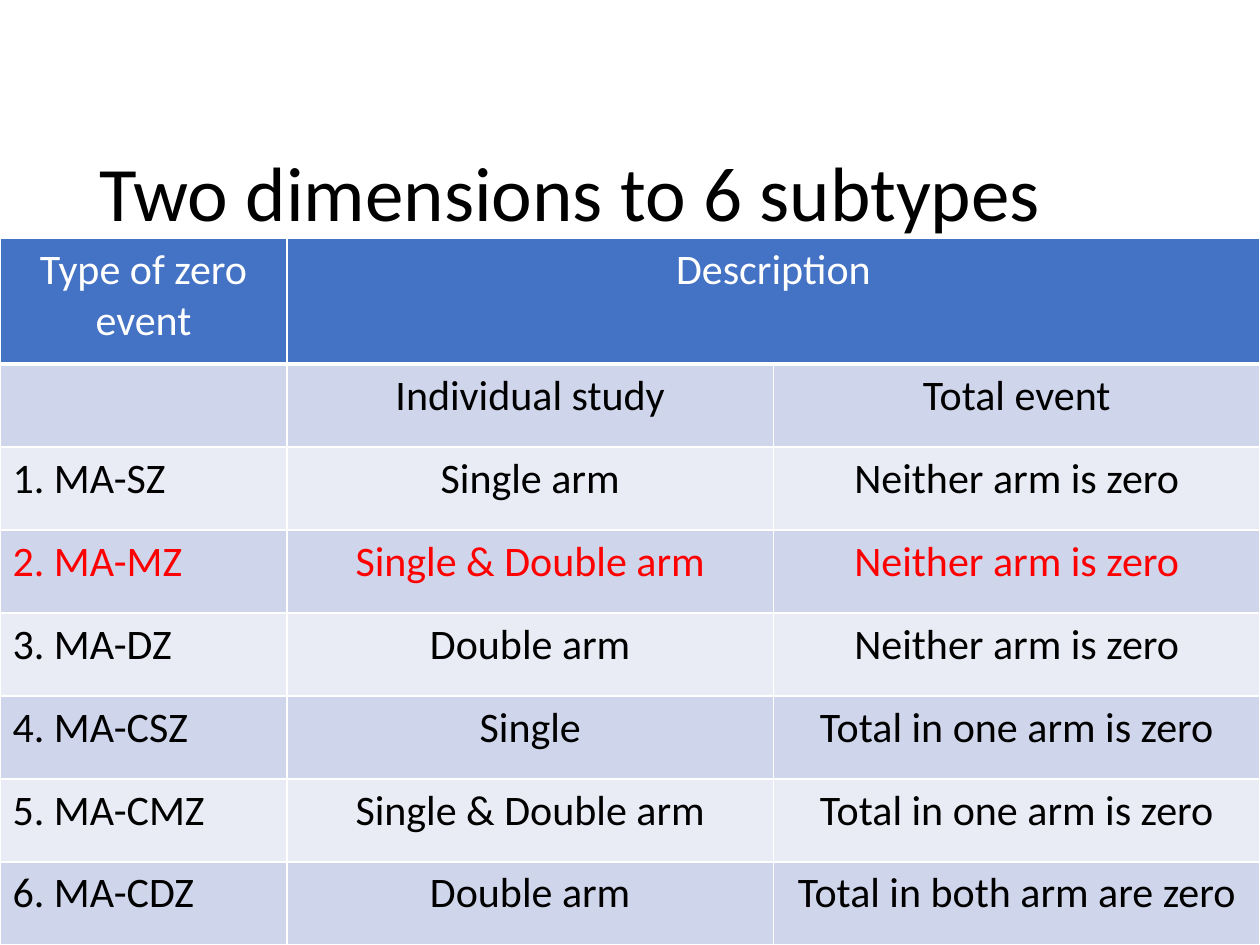
import dataclasses

import lxml.etree
import pptx
import pptx.dml.color
import pptx.enum.text
import pptx.oxml.ns
import pptx.table
import pptx.util

Pt = pptx.util.Pt
RGBColor = pptx.dml.color.RGBColor
ALIGN = pptx.enum.text.PP_ALIGN

BLACK = RGBColor(0x00, 0x00, 0x00)
WHITE = RGBColor(0xFF, 0xFF, 0xFF)
RED = RGBColor(0xFF, 0x00, 0x00)
HEADER_BLUE = RGBColor(0x44, 0x72, 0xC4)
BAND_DARK = RGBColor(0xCF, 0xD5, 0xEA)
BAND_LIGHT = RGBColor(0xE9, 0xEB, 0xF5)

FONT = "Calibri"
COLUMN_WIDTHS = (164, 278, 278)
HEADER_HEIGHT = 72
ROW_HEIGHT = 47.4
TABLE_TOP = 136.1
THIN, THICK = 1, 3


@dataclasses.dataclass(frozen=True)
class Subtype:
    label: str
    study: str
    total: str
    color: RGBColor = BLACK


ROWS = (
    Subtype("Type of zero event", "Description", "", WHITE),
    Subtype("", "Individual study", "Total event"),
    Subtype("1. MA-SZ", "Single arm", "Neither arm is zero"),
    Subtype("2. MA-MZ", "Single & Double arm", "Neither arm is zero", RED),
    Subtype("3. MA-DZ", "Double arm", "Neither arm is zero"),
    Subtype("4. MA-CSZ", "Single", "Total in one arm is zero"),
    Subtype("5. MA-CMZ", "Single & Double arm", "Total in one arm is zero"),
    Subtype("6. MA-CDZ", "Double arm", "Total in both arm are zero"),
)


def set_borders(cell: pptx.table._Cell, top: float, bottom: float) -> None:
    qn = pptx.oxml.ns.qn
    properties = cell._tc.get_or_add_tcPr()
    for side, width in (("L", THIN), ("R", THIN), ("T", top), ("B", bottom)):
        line = lxml.etree.SubElement(properties, qn(f"a:ln{side}"), w=str(Pt(width)))
        fill = lxml.etree.SubElement(line, qn("a:solidFill"))
        lxml.etree.SubElement(fill, qn("a:srgbClr"), val=str(WHITE))


def format_font(font, size: float, color: RGBColor) -> None:
    font.name = FONT
    font.size = Pt(size)
    font.bold = False
    font.color.rgb = color


def fill_row(table: pptx.table.Table, index: int, subtype: Subtype) -> None:
    if index == 0:
        band = HEADER_BLUE
    else:
        band = BAND_DARK if index % 2 else BAND_LIGHT
    for column, text in enumerate((subtype.label, subtype.study, subtype.total)):
        cell = table.cell(index, column)
        set_borders(cell, THICK if index == 1 else THIN, THICK if index == 0 else THIN)
        cell.fill.solid()
        cell.fill.fore_color.rgb = band
        cell.text_frame.text = text
        paragraph = cell.text_frame.paragraphs[0]
        centered = index == 0 or column > 0
        paragraph.alignment = ALIGN.CENTER if centered else ALIGN.LEFT
        format_font(paragraph.font, 24, subtype.color)
        for run in paragraph.runs:
            format_font(run.font, 24, subtype.color)


def add_title(slide, text: str) -> None:
    title = slide.shapes.title
    title.left, title.top, title.width, title.height = Pt(49.5), Pt(60), Pt(621), Pt(104.4)
    title.text_frame.text = text
    title.text_frame.vertical_anchor = pptx.enum.text.MSO_ANCHOR.MIDDLE
    paragraph = title.text_frame.paragraphs[0]
    paragraph.alignment = ALIGN.LEFT
    paragraph.line_spacing = 0.9
    format_font(paragraph.runs[0].font, 44, BLACK)


def add_subtype_table(slide) -> None:
    height = HEADER_HEIGHT + ROW_HEIGHT * (len(ROWS) - 1)
    table = slide.shapes.add_table(
        len(ROWS), len(COLUMN_WIDTHS),
        Pt(0), Pt(TABLE_TOP), Pt(sum(COLUMN_WIDTHS)), Pt(height),
    ).table
    for column, width in zip(table.columns, COLUMN_WIDTHS):
        column.width = Pt(width)
    for index, subtype in enumerate(ROWS):
        table.rows[index].height = Pt(ROW_HEIGHT if index else HEADER_HEIGHT)
        fill_row(table, index, subtype)
    table.cell(0, 1).merge(table.cell(0, 2))


def main() -> None:
    presentation = pptx.Presentation()
    presentation.slide_width = Pt(720)
    presentation.slide_height = Pt(540)
    slide = presentation.slides.add_slide(presentation.slide_layouts[5])
    add_title(slide, "Two dimensions to 6 subtypes")
    add_subtype_table(slide)
    presentation.save("out.pptx")


if __name__ == "__main__":
    main()
